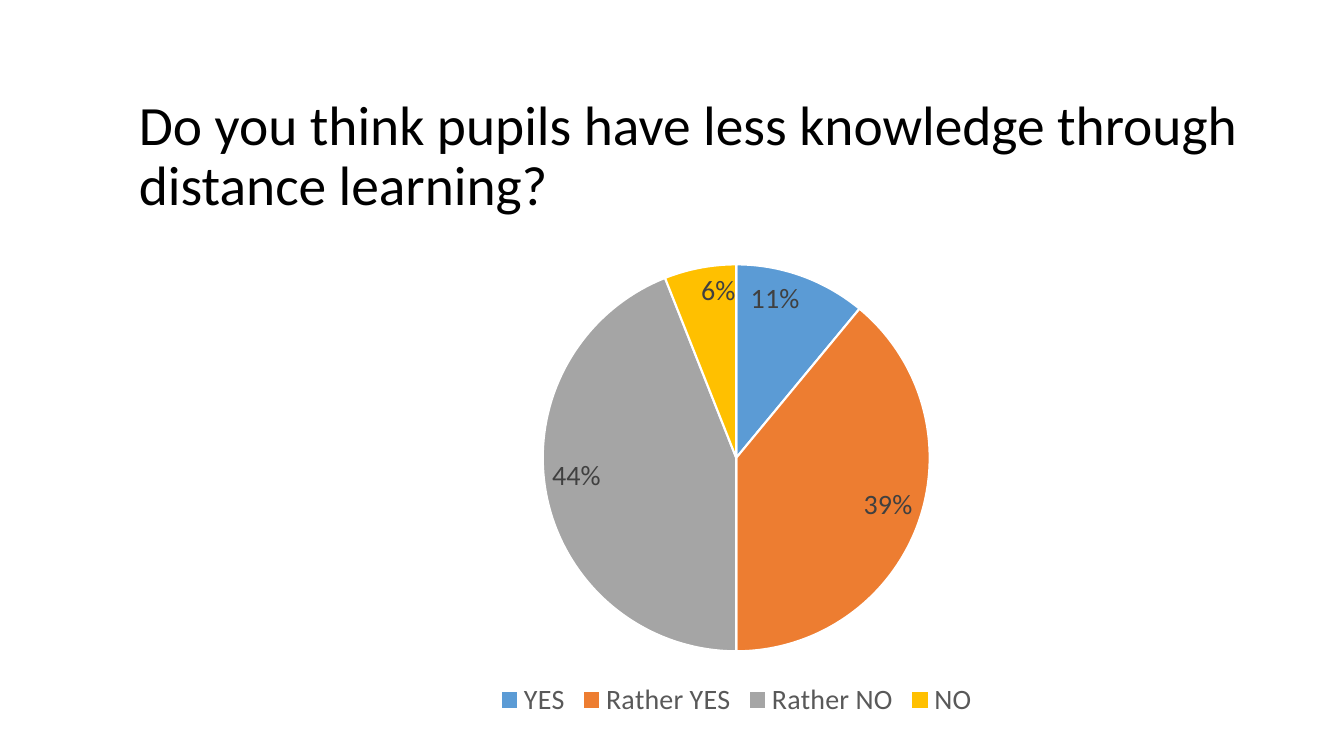
"""Build a survey slide with a question and a pie chart of the answers."""
from lxml import etree
from pptx import Presentation
from pptx import util as u
from pptx.chart import data
from pptx.dml import color
from pptx.enum import chart as ch, text
from pptx.oxml import ns

COLORS = {"title": "000000", "label": "404040", "legend": "595959", "border": "FFFFFF"}
ANSWERS = [
    ("YES", 11, "5B9BD5"),
    ("Rather YES", 39, "ED7D31"),
    ("Rather NO", 44, "A5A5A5"),
    ("NO", 6, "FFC000"),
]
PLOT_AREA = {"x": 0.34, "y": 0.1, "w": 0.32, "h": 0.76}


def style_font(font, size, hex_color):
    font.name = "Calibri"
    font.size = u.Pt(size)
    font.bold = False
    font.color.rgb = color.RGBColor.from_string(hex_color)


prs = Presentation()
prs.slide_width, prs.slide_height = u.Cm(33.87), u.Cm(19.05)
s = prs.slides.add_slide(prs.slide_layouts[6])

title = s.shapes.add_textbox(u.Cm(3.25), u.Cm(3.05), u.Cm(29.21), u.Cm(1.85))
tf = title.text_frame
tf.word_wrap = True
tf.vertical_anchor = text.MSO_ANCHOR.MIDDLE
p = tf.paragraphs[0]
p.line_spacing = 0.9
r = p.add_run()
r.text = "Do you think pupils have less knowledge through distance learning?"
style_font(r.font, 39.6, COLORS["title"])

survey = data.CategoryChartData()
survey.categories = [answer for answer, share, fill in ANSWERS]
survey.add_series("Series 1", [share for answer, share, fill in ANSWERS])
chart = s.shapes.add_chart(
    ch.XL_CHART_TYPE.PIE, u.Cm(3.25), u.Cm(5.38), u.Cm(30.61), u.Cm(12.83), survey
).chart
chart.has_title = False
style_font(chart.font, 10, COLORS["title"])

chart.has_legend = True
chart.legend.position = ch.XL_LEGEND_POSITION.BOTTOM
chart.legend.include_in_layout = False
style_font(chart.legend.font, 20, COLORS["legend"])

pie = chart.plots[0]
pie.vary_by_categories = True
for i, (answer, share, fill) in enumerate(ANSWERS):
    point = pie.series[0].points[i].format
    point.fill.solid()
    point.fill.fore_color.rgb = color.RGBColor.from_string(fill)
    point.line.width = u.Pt(1.5)
    point.line.color.rgb = color.RGBColor.from_string(COLORS["border"])

labels = pie.series[0].data_labels
labels.show_percentage = True
labels.show_value = False
labels.number_format = "0%"
labels.number_format_is_linked = False
labels.position = ch.XL_LABEL_POSITION.INSIDE_END
style_font(labels.font, 20, COLORS["label"])

plot_area = chart.element.find(".//" + ns.qn("c:plotArea"))
for layout in plot_area.findall(ns.qn("c:layout")):
    plot_area.remove(layout)
layout = etree.Element(ns.qn("c:layout"))
plot_area.insert(0, layout)
manual = etree.SubElement(layout, ns.qn("c:manualLayout"))
settings = {"layoutTarget": "inner", "xMode": "edge", "yMode": "edge", **PLOT_AREA}
for tag, value in settings.items():
    etree.SubElement(manual, ns.qn("c:" + tag)).set("val", str(value))

prs.save("out.pptx")
